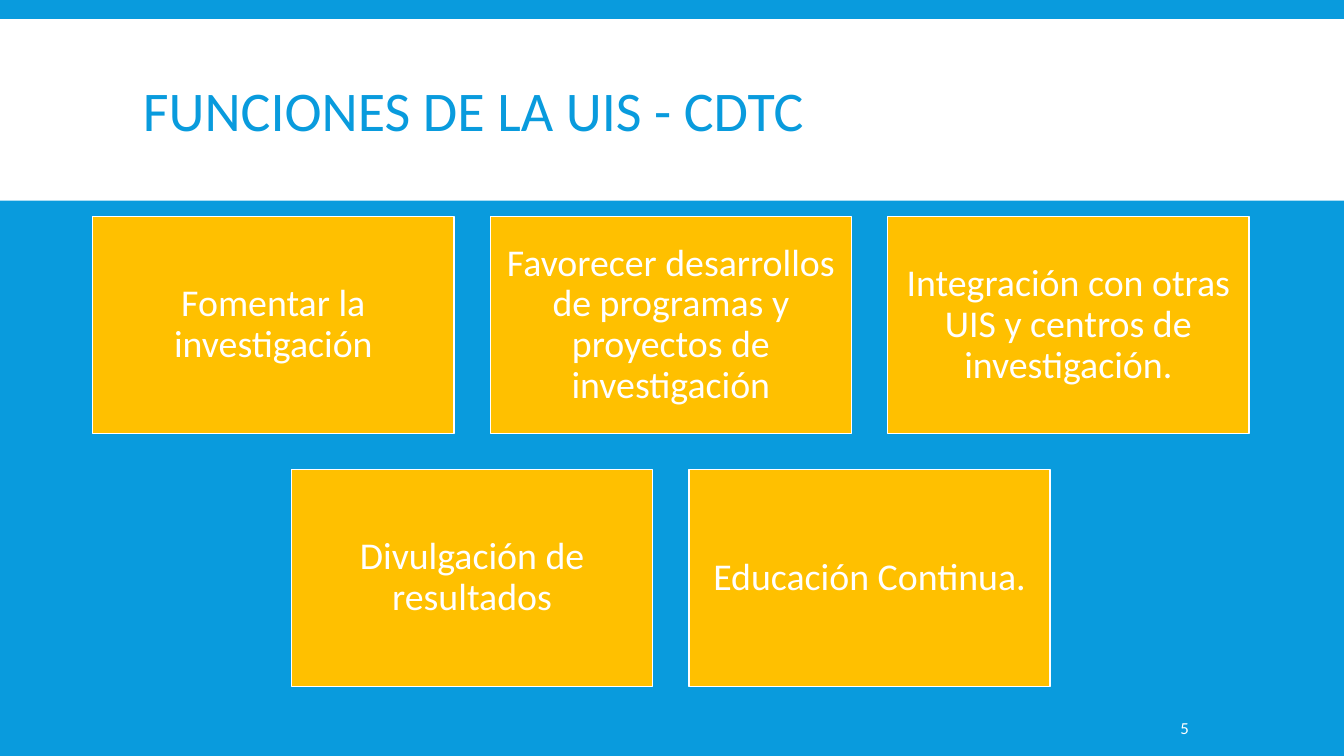
from dataclasses import dataclass

from pptx import Presentation
from pptx.dml.color import RGBColor
from pptx.enum.shapes import MSO_SHAPE
from pptx.enum.text import MSO_ANCHOR, PP_ALIGN
from pptx.util import Inches, Pt


@dataclass(frozen=True)
class Theme:
    font: str = "Calibri"
    blue: RGBColor = RGBColor(0x09, 0x9B, 0xDD)
    gold: RGBColor = RGBColor(0xFF, 0xC0, 0x00)
    white: RGBColor = RGBColor(0xFF, 0xFF, 0xFF)
    title: int = 40
    card: int = 27
    small: int = 12


def write(shape, text, *, font, size, color, align=PP_ALIGN.LEFT, lead=1.0,
          pad=(0.1, 0.05, 0.1, 0.05)):
    frame = shape.text_frame
    frame.word_wrap = True
    frame.vertical_anchor = MSO_ANCHOR.MIDDLE
    (frame.margin_left, frame.margin_top,
     frame.margin_right, frame.margin_bottom) = map(Inches, pad)
    para = frame.paragraphs[0]
    para.alignment = align
    para.line_spacing = lead
    run = para.add_run()
    run.text = text
    run.font.name = font
    run.font.size = Pt(size)
    run.font.color.rgb = color


class Deck:
    """Draws on one slide with a grid of 40 columns by 30 rows."""

    def __init__(self, theme):
        self.theme = theme
        self.prs = Presentation()
        self.prs.slide_width = Inches(13.33)
        self.prs.slide_height = Inches(7.5)
        self.slide = self.prs.slides.add_slide(self.prs.slide_layouts[6])
        fill = self.slide.background.fill
        fill.solid()
        fill.fore_color.rgb = theme.blue

    def place(self, col, row, wide, high):
        x = self.prs.slide_width / 40
        y = self.prs.slide_height / 30
        return [round(n) for n in (col * x, row * y, wide * x, high * y)]

    def block(self, spot, fill, line=None):
        shape = self.slide.shapes.add_shape(
            MSO_SHAPE.RECTANGLE, *self.place(*spot))
        shape.shadow.inherit = False
        shape.fill.solid()
        shape.fill.fore_color.rgb = fill
        if line is None:
            shape.line.fill.background()
        else:
            shape.line.color.rgb = line
            shape.line.width = Pt(1)
        return shape

    def label(self, spot, text, **style):
        box = self.slide.shapes.add_textbox(*self.place(*spot))
        write(box, text, font=self.theme.font, **style)

    def card(self, spot, text):
        look = self.theme
        shape = self.block(spot, look.gold, look.white)
        write(shape, text, font=look.font, size=look.card, color=look.white,
              align=PP_ALIGN.CENTER, lead=0.9, pad=(0.11,) * 4)

    def cards(self, rows, left, top, wide, high, step, drop):
        most = max(map(len, rows))
        for j, row in enumerate(rows):
            start = left + (most - len(row)) * step / 2
            for i, text in enumerate(row):
                self.card((start + i * step, top + j * drop, wide, high), text)


def main():
    look = Theme()
    deck = Deck(look)
    deck.block((0, 0.76, 40, 7.2), look.white)
    deck.label((3.96, 1.24, 32.1, 6.6), "FUNCIONES DE LA UIS - CDTC",
               size=look.title, color=look.blue, lead=0.85)
    deck.label((34.98, 28.08, 3.09, 1.6), "5", size=look.small,
               color=look.white, pad=(0.05, 0.05, 0.1, 0.05))
    tasks = [
        ["Fomentar la investigación",
         "Favorecer desarrollos de programas y proyectos de investigación",
         "Integración con otras UIS y centros de investigación."],
        ["Divulgación de resultados", "Educación Continua."],
    ]
    deck.cards(tasks, left=2.76, top=8.6, wide=10.75, high=8.6,
               step=11.83, drop=10.04)
    deck.prs.save("out.pptx")


if __name__ == "__main__":
    main()
